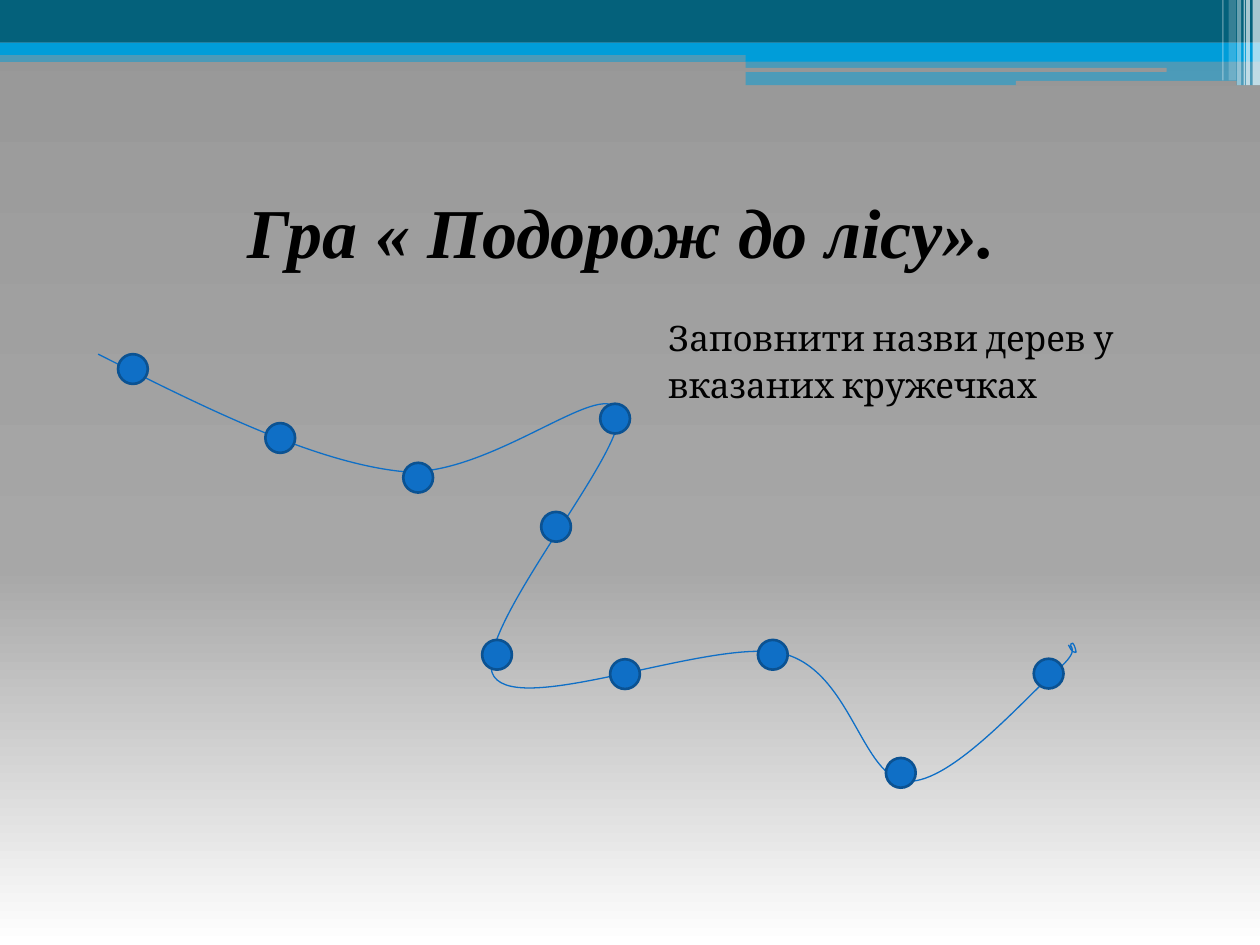
from copy import deepcopy
from dataclasses import dataclass
from itertools import chain

from lxml.etree import SubElement
from pptx import Presentation
from pptx.dml.color import RGBColor
from pptx.enum.shapes import MSO_SHAPE
from pptx.enum.text import MSO_ANCHOR, PP_ALIGN
from pptx.oxml.ns import qn
from pptx.util import Cm, Pt


@dataclass(frozen=True)
class Theme:
    background: tuple = ((0, "979797"), (0.6, "A7A7A7"), (1, "FFFFFF"))
    teal: str = "04617B"
    sky: str = "009DD9"
    gray: str = "979797"
    white: str = "FFFFFF"
    blue: str = "0F6FC6"
    navy: str = "0B5292"
    black: str = "000000"
    title_font: str = "Times New Roman"
    body_font: str = "Cambria"
    title_size: int = 40
    body_size: int = 20


# x, y, width, height, theme colour, opacity in percent
BANNER = [
    (0, 1.02, 25.4, 0.23, "sky", 50),
    (0, 0, 25.4, 0.86, "teal", 100),
    (0, 0.86, 25.4, 0.25, "sky", 100),
    (15.03, 0.99, 10.37, 0.25, "sky", 100),
    (15.03, 1.22, 10.37, 0.5, "sky", 50),
]
GAPS = [(15.01, 1.37, 8.51, 0.08), (20.48, 1.63, 4.45, 0.1)]
# x, width, height, opacity in percent
STRIPES = [
    (25.25, 0.15, 1.72, 65), (25.12, 0.08, 1.72, 65), (25.07, 0.03, 1.72, 60),
    (24.94, 0.08, 1.72, 40), (24.77, 0.15, 1.62, 20), (24.64, 0.03, 1.62, 30),
]
TRAIL_START = (1.98, 7.14)
# two control points and an end point for each curve
TRAIL = [
    ((4.14, 8.23), (6.3, 9.3), (8.05, 9.5)),
    ((9.8, 9.68), (12.14, 7.59), (12.45, 8.28)),
    ((12.78, 8.97), (9.4, 12.83), (9.96, 13.64)),
    ((10.52, 14.45), (14.4, 12.83), (15.8, 13.18)),
    ((17.17, 13.54), (17.37, 15.7), (18.29, 15.75)),
    ((19.2, 15.8), (20.75, 13.97), (21.31, 13.51)),
    ((21.84, 13.06), (21.51, 13.03), (21.59, 12.98)),
    ((21.64, 12.9), (21.69, 13.11), (21.69, 13.13)),
    ((21.72, 13.16), (21.64, 13.16), (21.62, 13.13)),
    ((21.59, 13.11), (21.54, 13), (21.54, 13)),
]
STOP_SIZE = 0.6
STOPS = [
    (2.38, 7.14), (5.35, 8.53), (8.13, 9.33), (12.1, 8.14), (10.91, 10.32),
    (9.72, 12.9), (12.3, 13.29), (20.84, 13.28), (15.28, 12.9), (17.86, 15.28),
]


def write(tf, lines, *, font, size, color, bold=False, italic=False,
          align=PP_ALIGN.LEFT, before=0, hanging=None):
    """Fill a frame, one paragraph a line; hanging is (margin, indent) in cm."""
    for i, line in enumerate(lines):
        p = tf.add_paragraph() if i else tf.paragraphs[0]
        p.alignment = align
        p.space_before = Pt(before)
        if hanging:
            for name, length in zip(("marL", "indent"), hanging):
                p._p.get_or_add_pPr().set(name, str(Cm(length)))
        r = p.add_run()
        r.text = line
        r.font.name, r.font.size = font, Pt(size)
        r.font.bold, r.font.italic = bold, italic
        r.font.color.rgb = RGBColor.from_string(color)


class SlideBuilder:
    def __init__(self, prs, theme):
        self.theme = theme
        self.s = prs.slides.add_slide(prs.slide_layouts[6])

    def background(self):
        fill = self.s.background.fill
        fill.gradient()
        fill.gradient_angle = 270
        stop_list = self.s._element.xpath(".//a:gsLst")[0]
        stop_list.append(deepcopy(stop_list[-1]))
        for stop, (position, color) in zip(fill.gradient_stops, self.theme.background):
            stop.position = position
            stop.color.rgb = RGBColor.from_string(color)

    def shape(self, x, y, w, h, color, *, kind=MSO_SHAPE.RECTANGLE, opacity=100, line=None):
        sp = self.s.shapes.add_shape(kind, Cm(x), Cm(y), Cm(w), Cm(h))
        sp.shadow.inherit = False
        sp.fill.solid()
        sp.fill.fore_color.rgb = RGBColor.from_string(color)
        if opacity < 100:
            clr = sp._element.spPr.find(qn("a:solidFill"))[0]
            SubElement(clr, qn("a:alpha")).set("val", str(opacity * 1000))
        if line:
            sp.line.color.rgb = RGBColor.from_string(line)
            sp.line.width = Pt(1.5)
        else:
            sp.line.fill.background()

    def trail(self, start, curves):
        """Draw a polyline through all points, then turn each three into a cubic curve."""
        points = [(Cm(x), Cm(y)) for x, y in chain([start], *curves)]
        builder = self.s.shapes.build_freeform(*points[0])
        builder.add_line_segments(points[1:], close=False)
        sp = builder.convert_to_shape()
        outline = sp._element.xpath(".//a:path")[0]
        segments = outline.findall(qn("a:lnTo"))
        for i in range(0, len(segments), 3):
            curve = SubElement(outline, qn("a:cubicBezTo"))
            for segment in segments[i:i + 3]:
                curve.append(segment[0])
                outline.remove(segment)
        sp.shadow.inherit = False
        sp.fill.background()
        sp.line.color.rgb = RGBColor.from_string(self.theme.blue)
        sp.line.width = Pt(0.75)

    def text(self, x, y, w, h, lines, *, anchor=MSO_ANCHOR.TOP, **style):
        tf = self.s.shapes.add_textbox(Cm(x), Cm(y), Cm(w), Cm(h)).text_frame
        tf.word_wrap = True
        tf.vertical_anchor = anchor
        write(tf, lines, color=self.theme.black, **style)


def main():
    prs = Presentation()
    prs.slide_width, prs.slide_height = Cm(25.4), Cm(19.05)
    theme = Theme()
    slide = SlideBuilder(prs, theme)

    slide.background()
    for x, y, w, h, color, opacity in BANNER:
        slide.shape(x, y, w, h, getattr(theme, color), opacity=opacity)
    for box in GAPS:
        slide.shape(*box, theme.gray, kind=MSO_SHAPE.ROUNDED_RECTANGLE)
    for x, w, h, opacity in STRIPES:
        slide.shape(x, 0, w, h, theme.white, opacity=opacity)

    slide.text(1.27, 3.16, 22.86, 2.97, ["Гра « Подорож до лісу». "],
               anchor=MSO_ANCHOR.MIDDLE, align=PP_ALIGN.CENTER, bold=True, italic=True,
               font=theme.title_font, size=theme.title_size)
    slide.text(12.91, 6.25, 11.23, 12.57, ["Заповнити назви дерев у", "вказаних кружечках"],
               font=theme.body_font, size=theme.body_size, before=3, hanging=(1.02, -0.71))

    slide.trail(TRAIL_START, TRAIL)
    for x, y in STOPS:
        slide.shape(x, y, STOP_SIZE, STOP_SIZE, theme.blue,
                    kind=MSO_SHAPE.FLOWCHART_CONNECTOR, line=theme.navy)

    prs.save("out.pptx")


if __name__ == "__main__":
    main()
